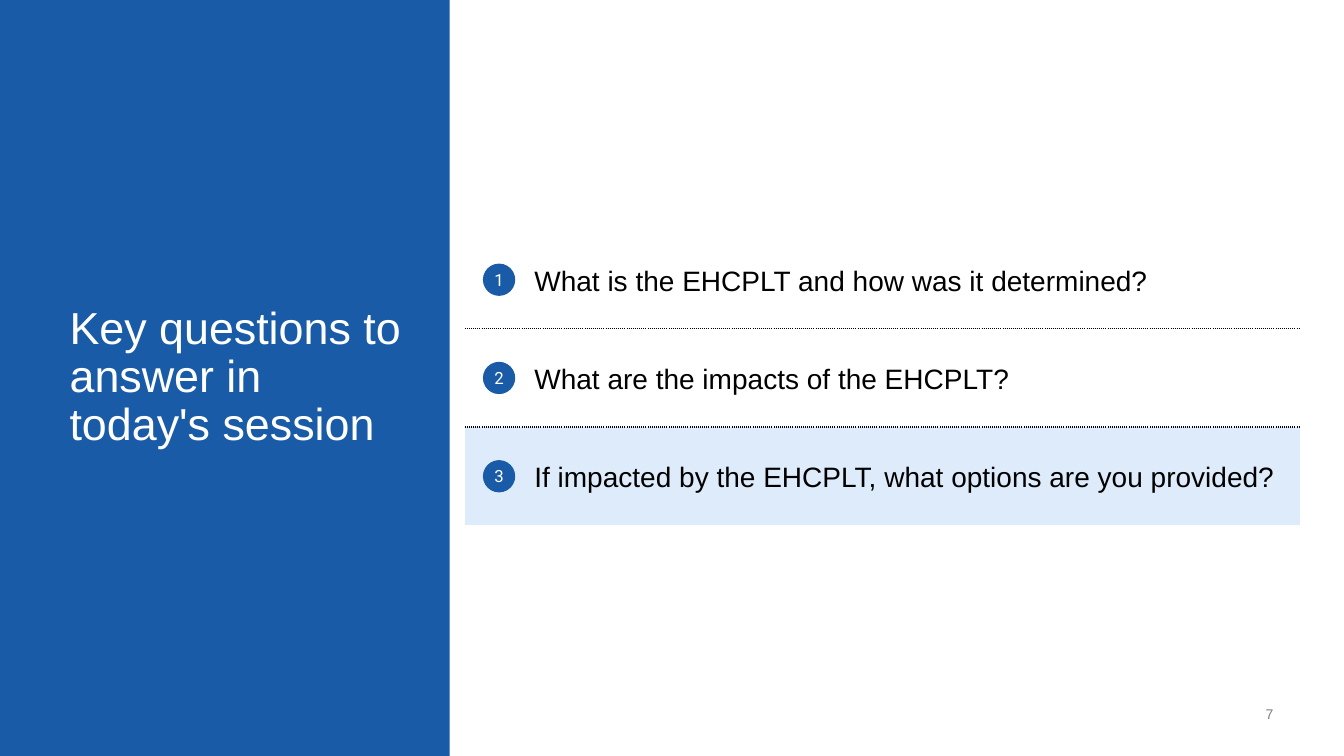
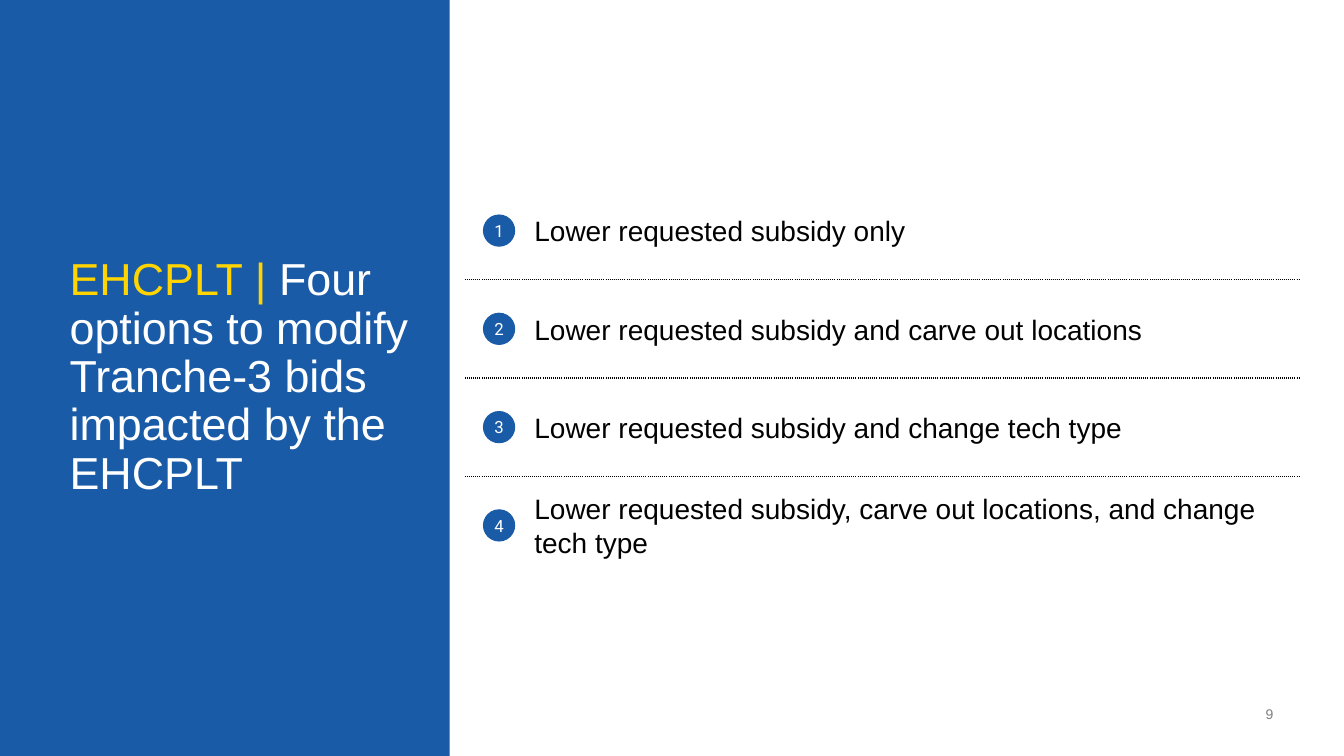
from dataclasses import dataclass
from typing import Any

from lxml import etree
from pptx import Presentation
from pptx import util as u
from pptx.dml.color import RGBColor
from pptx.enum import shapes, text
from pptx.oxml import ns

BLUE = RGBColor(0x1A, 0x5B, 0xA7)
PALE_BLUE = RGBColor(0xDE, 0xEB, 0xFA)
YELLOW = RGBColor(0xFF, 0xD4, 0x00)
WHITE = RGBColor(0xFF, 0xFF, 0xFF)
GREY = RGBColor(0x80, 0x80, 0x80)
INK = RGBColor(0x02, 0x01, 0x01)

WIDTH, HEIGHT = 13.33, 7.5
PANEL_LEFT = 4.46
TABLE_LEFT = 4.61
COLUMNS = (0.69, 7.59)
ROW_HEIGHT = HEIGHT * 0.13
BADGE_SIZE = 0.31
BADGE_CENTRE = 4.95

TITLE_FONT = {"name": "Arial", "size": u.Pt(32)}
ITEM_FONT = {"name": "Arial", "size": u.Pt(20)}
BADGE_FONT = {"name": "Roboto", "size": u.Pt(12)}
PAGE_FONT = {"name": "Arial", "size": u.Pt(10)}
TIGHT_FRAME = {
    "margin_left": 0, "margin_top": 0, "margin_right": 0, "margin_bottom": 0,
    "word_wrap": True, "vertical_anchor": text.MSO_ANCHOR.MIDDLE,
}
TIGHT_CELL = {key: value for key, value in TIGHT_FRAME.items() if key != "word_wrap"}


@dataclass(frozen=True)
class Span:
    words: str
    colour: RGBColor


@dataclass(frozen=True)
class Agenda:
    number: int
    title: tuple[Span, ...]
    items: tuple[str, ...]
    highlighted: int | None = None


AGENDAS = (
    Agenda(
        7,
        (Span("Key questions to answer in today's session", WHITE),),
        (
            "What is the EHCPLT and how was it determined?",
            "What are the impacts of the EHCPLT?",
            "If impacted by the EHCPLT, what options are you provided?",
        ),
        highlighted=2,
    ),
    Agenda(
        9,
        (
            Span("EHCPLT | ", YELLOW),
            Span("Four options to modify Tranche-3 bids impacted by the EHCPLT", WHITE),
        ),
        (
            "Lower requested subsidy only",
            "Lower requested subsidy and carve out locations",
            "Lower requested subsidy and change tech type",
            "Lower requested subsidy, carve out locations, and change tech type",
        ),
    ),
)


def apply(target: Any, values: dict[str, Any]) -> None:
    for name, value in values.items():
        setattr(target, name, value)


def write(frame: Any, spans: tuple[Span, ...], font: dict[str, Any], layout: dict[str, Any]) -> None:
    para = frame.paragraphs[0]
    apply(para, layout)
    for span in spans:
        run = para.add_run()
        run.text = span.words
        apply(run.font, font)
        run.font.color.rgb = span.colour


def add_text(page: Any, area: tuple[float, ...], spans: tuple[Span, ...],
             font: dict[str, Any], layout: dict[str, Any], frame: dict[str, Any]) -> None:
    box = page.shapes.add_textbox(*map(u.Inches, area))
    apply(box.text_frame, TIGHT_FRAME | frame)
    write(box.text_frame, spans, font, layout)


def add_filled(page: Any, kind: shapes.MSO_SHAPE, area: tuple[float, ...], colour: RGBColor) -> Any:
    shape = page.shapes.add_shape(kind, *map(u.Inches, area))
    shape.shadow.inherit = False
    shape.fill.solid()
    shape.fill.fore_color.rgb = colour
    return shape


def set_edge(cell: Any, side: str, dotted: bool) -> None:
    properties = cell._tc.get_or_add_tcPr()
    line = etree.SubElement(properties, ns.qn(f"a:ln{side}"), w=str(u.Pt(1)))
    if dotted:
        fill = etree.SubElement(line, ns.qn("a:solidFill"))
        etree.SubElement(fill, ns.qn("a:srgbClr"), val=str(INK))
        etree.SubElement(line, ns.qn("a:prstDash"), val="sysDot")
    else:
        etree.SubElement(line, ns.qn("a:noFill"))


def add_items(page: Any, agenda: Agenda) -> None:
    count = len(agenda.items)
    top = (HEIGHT - count * ROW_HEIGHT) / 2
    area = (TABLE_LEFT, top, sum(COLUMNS), count * ROW_HEIGHT)
    table = page.shapes.add_table(count, len(COLUMNS), *map(u.Inches, area)).table
    apply(table, {"first_row": False, "horz_banding": False})
    for column, width in zip(table.columns, COLUMNS):
        column.width = u.Inches(width)
    for index, (row, item) in enumerate(zip(table.rows, agenda.items)):
        row.height = u.Inches(ROW_HEIGHT)
        edges = {"L": False, "R": False, "T": index > 0, "B": index < count - 1}
        for cell in row.cells:
            apply(cell, TIGHT_CELL)
            for side, dotted in edges.items():
                set_edge(cell, side, dotted)
            if index == agenda.highlighted:
                cell.fill.solid()
                cell.fill.fore_color.rgb = PALE_BLUE
            else:
                cell.fill.background()
        write(row.cells[1].text_frame, (Span(item, INK),), ITEM_FONT, {"line_spacing": 1.1})
    for index in range(count):
        add_badge(page, index + 1, top + (index + 0.5) * ROW_HEIGHT)


def add_badge(page: Any, number: int, middle: float) -> None:
    area = (BADGE_CENTRE - BADGE_SIZE / 2, middle - BADGE_SIZE / 2, BADGE_SIZE, BADGE_SIZE)
    badge = add_filled(page, shapes.MSO_SHAPE.OVAL, area, BLUE)
    badge.line.color.rgb = BLUE
    badge.line.width = u.Pt(0.75)
    apply(badge.text_frame, TIGHT_FRAME)
    write(badge.text_frame, (Span(str(number), WHITE),), BADGE_FONT,
          {"alignment": text.PP_ALIGN.CENTER})


def add_page(deck: Any, agenda: Agenda) -> None:
    page = deck.slides.add_slide(deck.slide_layouts[6])
    page.background.fill.solid()
    page.background.fill.fore_color.rgb = BLUE
    panel_area = (PANEL_LEFT, 0, WIDTH - PANEL_LEFT, HEIGHT)
    panel = add_filled(page, shapes.MSO_SHAPE.RECTANGLE, panel_area, WHITE)
    panel.line.fill.background()
    add_text(page, (12.21, 7, 0.42, 0.17), (Span(str(agenda.number), GREY),), PAGE_FONT,
             {"alignment": text.PP_ALIGN.RIGHT}, {"vertical_anchor": text.MSO_ANCHOR.BOTTOM})
    add_text(page, (0.69, 2.93, 3.42, 1.64), agenda.title, TITLE_FONT, {"line_spacing": 0.9}, {})
    add_items(page, agenda)


def main() -> None:
    deck = Presentation()
    apply(deck, {"slide_width": u.Inches(WIDTH), "slide_height": u.Inches(HEIGHT)})
    for agenda in AGENDAS:
        add_page(deck, agenda)
    deck.save("out.pptx")


if __name__ == "__main__":
    main()
